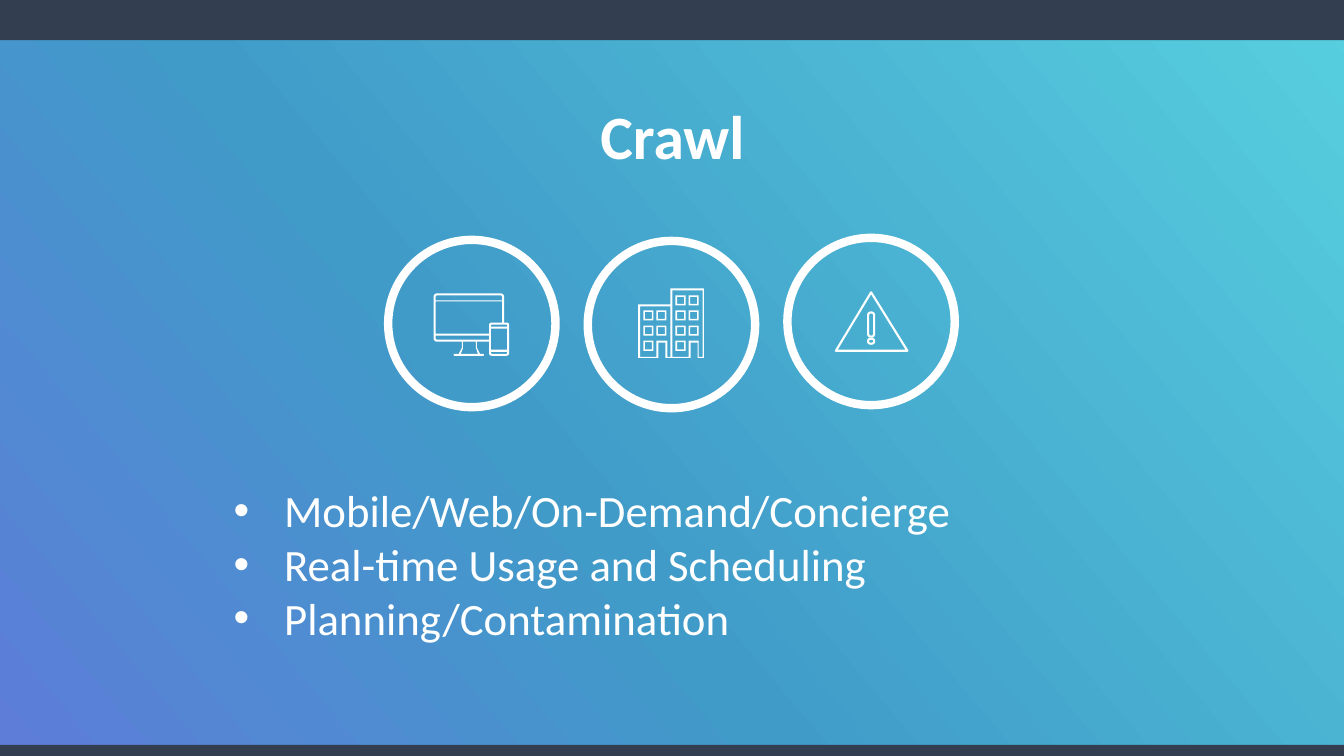
from copy import deepcopy
from pptx import Presentation
from pptx.dml.color import RGBColor
from pptx.enum.shapes import MSO_SHAPE
from pptx.enum.text import MSO_ANCHOR, MSO_AUTO_SIZE, PP_ALIGN
from pptx.oxml.ns import qn
from pptx.oxml.xmlchemy import OxmlElement
from pptx.util import Inches, Pt

TITLE = "Crawl"
POINTS = [
    "Mobile/Web/On-Demand/Concierge",
    "Real-time Usage and Scheduling",
    "Planning/Contamination",
]
THEME = {
    "white": RGBColor.from_string("FFFFFF"),
    "bar": RGBColor.from_string("333F50"),
    "gradient": [(0, "57CFDF"), (0.6, "409BC8"), (1, "5D7DD9")],
    "gradient_angle": 220,
    "font": "Calibri",
    "title_size": 44,
    "body_size": 32,
    "ring_width": 6,
    "icon_width": 1.5,
}
BARS = [(0, 7.39, 13.33, 0.11), (0, 0, 13.33, 0.4)]
RING_LEFT, RING_STEP, RING_SIZE = 3.85, 1.98, 1.66
RING_TOPS = [2.38, 2.39, 2.36]


def frame(left, top, right, bottom, top_radius=0, bottom_radius=0):
    return [(left, top, top_radius), (right, top, top_radius),
            (right, bottom, bottom_radius), (left, bottom, bottom_radius)]


SCREENS = [
    [(4.3, 2.91, 0.04), (5, 2.91, 0.04), (5, 3.2, 0), (5.05, 3.2, 0.03),
     (5.05, 3.53, 0.03), (4.85, 3.53, 0.03), (4.85, 3.39, 0), (4.73, 3.39, 0),
     (4.73, 3.45, 0), (4.76, 3.51, 0), (4.8, 3.51, 0.01), (4.8, 3.53, 0.01),
     (4.5, 3.53, 0.01), (4.5, 3.51, 0.01), (4.55, 3.51, 0), (4.58, 3.45, 0),
     (4.58, 3.39, 0), (4.3, 3.39, 0.04)],
    frame(4.32, 2.93, 4.98, 2.98, 0.02),
    [(4.59, 3.39, 0), (4.72, 3.39, 0), (4.72, 3.45, 0), (4.74, 3.51, 0),
     (4.57, 3.51, 0), (4.59, 3.46, 0)],
    [(4.32, 3.33, 0), (4.85, 3.33, 0), (4.85, 3.37, 0), (4.32, 3.37, 0.02)],
    [(4.32, 2.99, 0), (4.98, 2.99, 0), (4.98, 3.2, 0), (4.85, 3.2, 0.03),
     (4.85, 3.31, 0), (4.32, 3.31, 0)],
    frame(4.87, 3.49, 5.03, 3.51, 0, 0.01),
    frame(4.87, 3.26, 5.03, 3.47),
    frame(4.87, 3.22, 5.03, 3.24, 0.01),
]
WARNING = [
    [(8.29, 3.48, 0), (8.64, 2.9, 0), (9, 3.48, 0)],
    frame(8.61, 3.36, 8.67, 3.41, 0.03, 0.03),
    frame(8.61, 3.1, 8.67, 3.34, 0.03, 0.03),
]
BUILDING_WALLS = [
    [(6.33, 3.02, 0), (6.65, 3.02, 0), (6.65, 2.86, 0), (6.98, 2.86, 0),
     (6.98, 3.55, 0), (6.92, 3.55, 0), (6.92, 3.4, 0), (6.85, 3.4, 0),
     (6.85, 3.55, 0), (6.6, 3.55, 0), (6.6, 3.4, 0), (6.53, 3.4, 0),
     (6.53, 3.55, 0), (6.33, 3.55, 0)],
    [(6.35, 3.04, 0), (6.65, 3.04, 0), (6.65, 3.54, 0), (6.62, 3.54, 0),
     (6.62, 3.38, 0), (6.51, 3.38, 0), (6.51, 3.54, 0), (6.35, 3.54, 0)],
    [(6.67, 2.88, 0), (6.97, 2.88, 0), (6.97, 3.54, 0), (6.93, 3.54, 0),
     (6.93, 3.38, 0), (6.83, 3.38, 0), (6.83, 3.54, 0), (6.67, 3.54, 0)],
]
WINDOW_COLUMNS = [(6.38, 3.08, 3), (6.51, 3.08, 2), (6.7, 2.93, 4), (6.83, 2.93, 3)]
WINDOW_SIZE, WINDOW_STEP = 0.1, 0.15
WINDOWS = [
    frame(left + inset, top + row * WINDOW_STEP + inset,
          left + WINDOW_SIZE - inset, top + row * WINDOW_STEP + WINDOW_SIZE - inset)
    for left, top, count in WINDOW_COLUMNS
    for row in range(count)
    for inset in (0, 0.015)
]
ICONS = [(SCREENS, True), (WARNING, False), (BUILDING_WALLS + WINDOWS, True)]


def toward(corner, other, distance):
    dx, dy = other[0] - corner[0], other[1] - corner[1]
    length = (dx * dx + dy * dy) ** 0.5
    share = min(distance / length, 0.5)
    return corner[0] + dx * share, corner[1] + dy * share


def smooth_corners(contour, steps=4):
    outline = []
    for index, corner in enumerate(contour):
        x, y, radius = corner
        if not radius:
            outline.append((x, y))
            continue
        start = toward(corner, contour[index - 1], radius)
        end = toward(corner, contour[(index + 1) % len(contour)], radius)
        for step in range(steps + 1):
            t = step / steps
            outline.append(tuple(
                (1 - t) ** 2 * start[axis] + 2 * t * (1 - t) * corner[axis] + t * t * end[axis]
                for axis in (0, 1)))
    return [(Inches(x), Inches(y)) for x, y in outline]


def paint(shape, fill=None, line_width=None):
    shape.shadow.inherit = False
    if fill is None:
        shape.fill.background()
    else:
        shape.fill.solid()
        shape.fill.fore_color.rgb = fill
    if line_width is None:
        shape.line.fill.background()
    else:
        shape.line.color.rgb = THEME["white"]
        shape.line.width = Pt(line_width)


def paint_background(page):
    fill = page.background.fill
    fill.gradient()
    fill.gradient_angle = THEME["gradient_angle"]
    stop_list = page.element.find(".//" + qn("a:gsLst"))
    stop_list.append(deepcopy(stop_list[0]))
    for stop, (position, color) in zip(fill.gradient_stops, THEME["gradient"]):
        stop.position = position
        stop.color.rgb = RGBColor.from_string(color)


def add_icon(page, contours, filled):
    outlines = [smooth_corners(contour) for contour in contours]
    builder = page.shapes.build_freeform(*outlines[0][0], scale=1.0)
    for number, outline in enumerate(outlines):
        if number:
            builder.move_to(*outline[0])
        builder.add_line_segments(outline[1:], close=True)
    icon = builder.convert_to_shape()
    if filled:
        paint(icon, fill=THEME["white"])
    else:
        paint(icon, line_width=THEME["icon_width"])


def add_bullet(para):
    properties = para._p.get_or_add_pPr()
    properties.set("marL", str(Inches(0.5)))
    properties.set("indent", str(-Inches(0.5)))
    for tag, name, value in (("a:buFont", "typeface", "Arial"), ("a:buChar", "char", "•")):
        element = OxmlElement(tag)
        element.set(name, value)
        properties.append(element)


def add_text(page, bounds, lines, size, bold=False, bullets=False):
    box = page.shapes.add_textbox(*map(Inches, bounds))
    text = box.text_frame
    settings = {
        "word_wrap": True,
        "vertical_anchor": MSO_ANCHOR.TOP,
        "auto_size": MSO_AUTO_SIZE.SHAPE_TO_FIT_TEXT if bullets else MSO_AUTO_SIZE.NONE,
    }
    for name, value in settings.items():
        setattr(text, name, value)
    for number, line in enumerate(lines):
        para = text.add_paragraph() if number else text.paragraphs[0]
        para.alignment = PP_ALIGN.LEFT if bullets else PP_ALIGN.CENTER
        if bullets:
            add_bullet(para)
        span = para.add_run()
        span.text = line
        for name, value in {"name": THEME["font"], "size": Pt(size), "bold": bold}.items():
            setattr(span.font, name, value)
        span.font.color.rgb = THEME["white"]


def main():
    deck = Presentation()
    deck.slide_width, deck.slide_height = Inches(13.33), Inches(7.5)
    page = deck.slides.add_slide(deck.slide_layouts[6])
    paint_background(page)
    for bounds in BARS:
        bar = page.shapes.add_shape(MSO_SHAPE.RECTANGLE, *map(Inches, bounds))
        paint(bar, fill=THEME["bar"])
    add_text(page, (0.67, 0.92, 12, 1.25), [TITLE], THEME["title_size"], bold=True)
    for number, top in enumerate(RING_TOPS):
        bounds = (RING_LEFT + number * RING_STEP, top, RING_SIZE, RING_SIZE)
        ring = page.shapes.add_shape(MSO_SHAPE.OVAL, *map(Inches, bounds))
        paint(ring, line_width=THEME["ring_width"])
    add_text(page, (2.22, 4.74, 10.36, 1.72), POINTS, THEME["body_size"], bullets=True)
    for contours, filled in ICONS:
        add_icon(page, contours, filled)
    deck.save("out.pptx")


if __name__ == "__main__":
    main()
